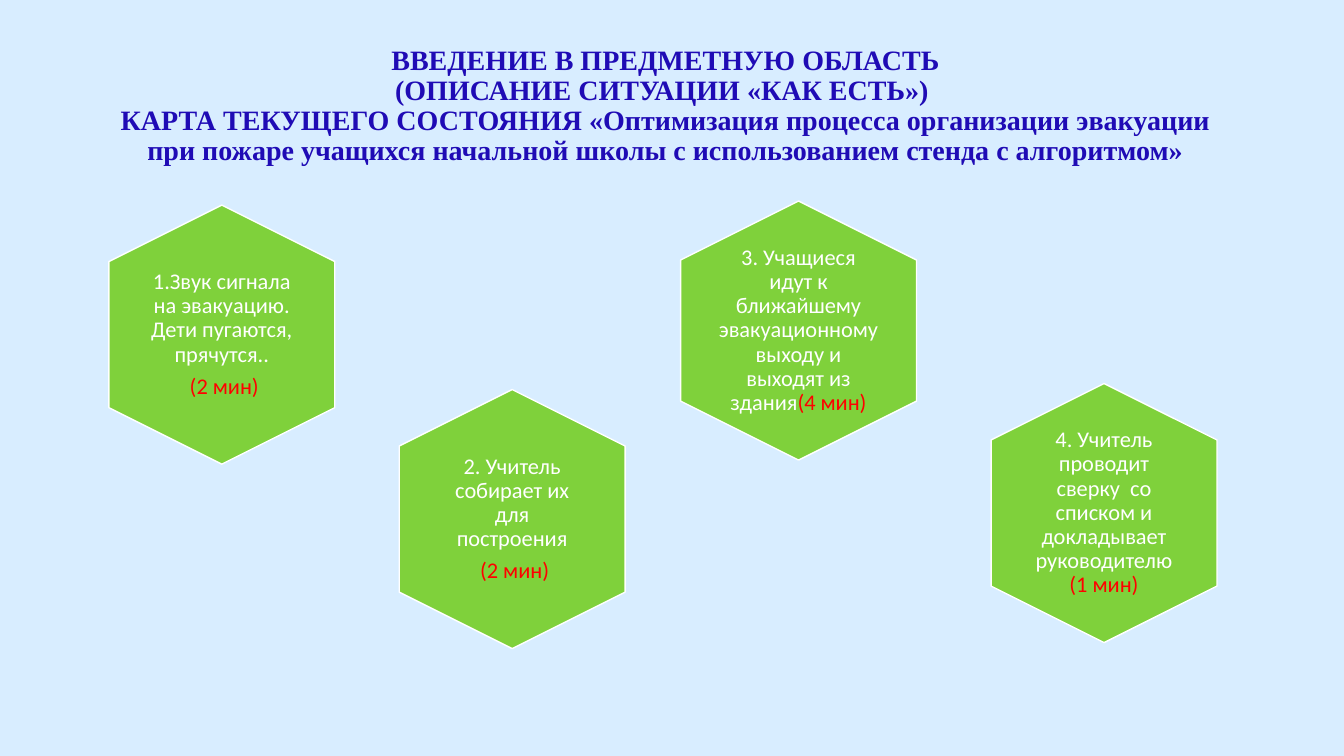
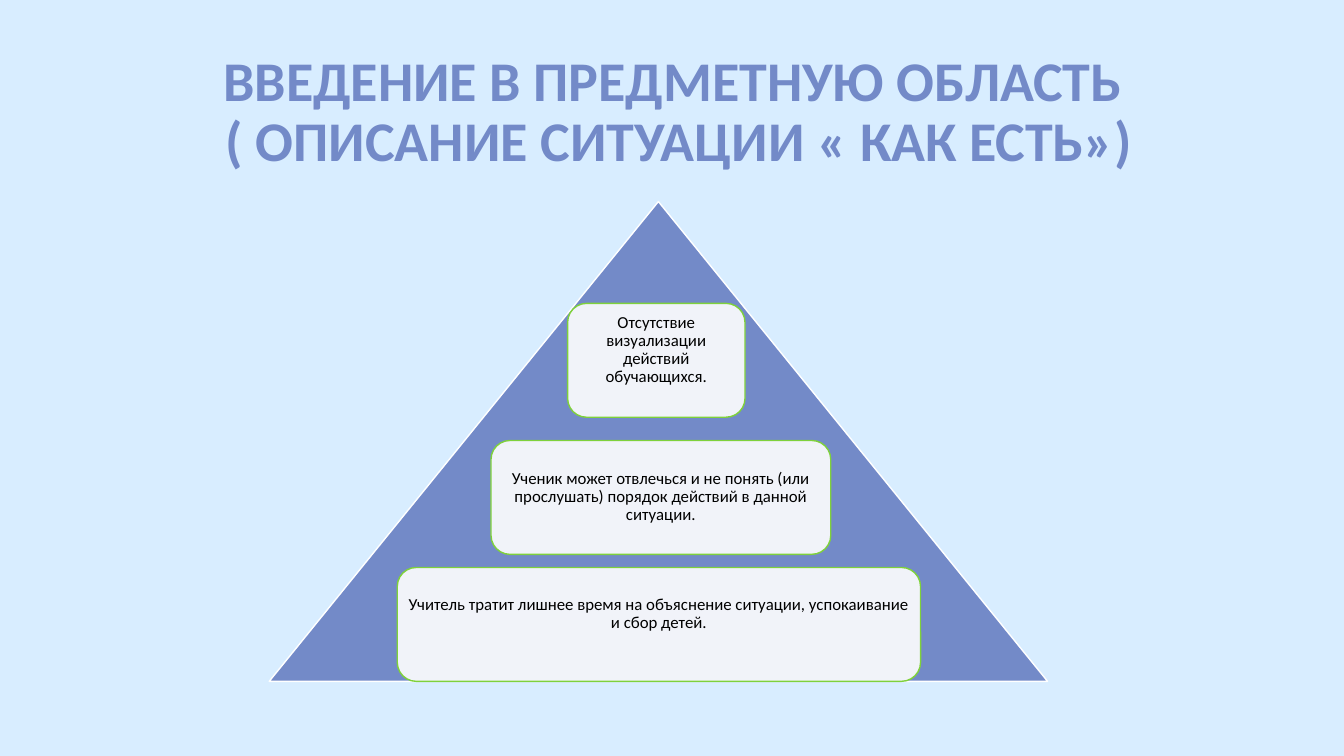
from lxml import etree
from pptx import Presentation
from pptx.dml.color import RGBColor
from pptx.enum.shapes import MSO_SHAPE
from pptx.enum.text import MSO_ANCHOR, MSO_AUTO_SIZE, PP_ALIGN
from pptx.oxml.ns import qn
from pptx.util import Inches, Pt

CENTER = PP_ALIGN.CENTER
MIDDLE = MSO_ANCHOR.MIDDLE
NO_FIT = MSO_AUTO_SIZE.NONE
HEXAGON = MSO_SHAPE.HEXAGON
TRIANGLE = MSO_SHAPE.ISOSCELES_TRIANGLE
ROUNDED = MSO_SHAPE.ROUNDED_RECTANGLE

COLORS = {
    "sky": "D8EDFF",
    "navy": "1F0BB5",
    "blue": "738AC8",
    "green": "7FD13B",
    "white": "FFFFFF",
    "black": "000000",
    "red": "FF0000",
}
RGB = {name: RGBColor.from_string(value) for name, value in COLORS.items()}


def add_figure(s, kind, x, y, w, h, fill, line):
    sp = s.shapes.add_shape(kind, Inches(x), Inches(y), Inches(w), Inches(h))
    sp.shadow.inherit = False
    sp.fill.solid()
    sp.fill.fore_color.rgb = RGB[fill]
    sp.line.color.rgb = RGB[line]
    sp.line.width = Pt(1)
    return sp


def write_text(sp, paragraphs, size, font="Calibri", bold=False, after=0.35, insets=None):
    tf = sp.text_frame
    frame_format = {"word_wrap": True, "auto_size": NO_FIT, "vertical_anchor": MIDDLE}
    for side, inset in (insets or {}).items():
        frame_format["margin_" + side] = Inches(inset)
    for name, value in frame_format.items():
        setattr(tf, name, value)
    for i, runs in enumerate(paragraphs):
        p = tf.add_paragraph() if i else tf.paragraphs[0]
        for name, value in {"alignment": CENTER, "line_spacing": 0.9,
                            "space_before": Pt(0), "space_after": Pt(size * after)}.items():
            setattr(p, name, value)
        for text, color in runs:
            for j, part in enumerate(text.split("\n")):
                if j:
                    p.add_line_break()
                r = p.add_run()
                r.text = part
                for name, value in {"name": font, "size": Pt(size), "bold": bold}.items():
                    setattr(r.font, name, value)
                r.font.color.rgb = RGB[color]


prs = Presentation()
prs.slide_width = Inches(13.33)
prs.slide_height = Inches(7.5)
background = prs.slide_master.background.fill
background.solid()
background.fore_color.rgb = RGB["sky"]

titles = [
    ("ВВЕДЕНИЕ В ПРЕДМЕТНУЮ ОБЛАСТЬ\n(ОПИСАНИЕ СИТУАЦИИ «КАК ЕСТЬ») \n"
     "КАРТА ТЕКУЩЕГО СОСТОЯНИЯ «Оптимизация процесса организации эвакуации "
     "при пожаре учащихся начальной школы с использованием стенда с алгоритмом»",
     0.85, 0.33, 20, "Times New Roman", "navy"),
    ("ВВЕДЕНИЕ В ПРЕДМЕТНУЮ ОБЛАСТЬ\n ( ОПИСАНИЕ СИТУАЦИИ « КАК ЕСТЬ»)",
     0.92, 0.4, 40, "Calibri", "blue"),
]
slides = []
for text, x, y, size, font, color in titles:
    s = prs.slides.add_slide(prs.slide_layouts[5])
    title = s.shapes.title
    for name, value in {"left": x, "top": y, "width": 11.5, "height": 1.45}.items():
        setattr(title, name, Inches(value))
    write_text(title, [[(text, color)]], size, font, bold=True, after=0)
    slides.append(s)
map_slide, pyramid_slide = slides

HEX_HEIGHT = 2.57
TEXT_HEIGHT = 1.77
steps = [
    (2.2, 3.32, 2.24, 1.54, 0.07,
     [[("1.Звук сигнала на эвакуацию. Дети пугаются, прячутся..", "white")],
      [(" (2 мин)", "red")]]),
    (5.08, 5.15, 2.24, 1.54, 0.07,
     [[("2. Учитель собирает их для построения", "white")], [(" (2 мин)", "red")]]),
    (7.92, 3.28, 2.34, 1.6, 0,
     [[("3. Учащиеся идут к ближайшему эвакуационному выходу и выходят из здания", "white"),
       ("(4 мин)", "red")]]),
    (10.95, 5.09, 2.24, 1.54, 0,
     [[("4. Учитель проводит сверку  со списком и докладывает руководителю ", "white"),
       ("(1 мин)", "red")]]),
]
for cx, cy, hex_width, text_width, inset, paragraphs in steps:
    sp = add_figure(map_slide, HEXAGON, cx - HEX_HEIGHT / 2, cy - hex_width / 2,
                    HEX_HEIGHT, hex_width, "green", "white")
    sp.rotation = 90
    box = map_slide.shapes.add_textbox(
        Inches(cx - text_width / 2), Inches(cy - TEXT_HEIGHT / 2),
        Inches(text_width), Inches(TEXT_HEIGHT))
    write_text(box, paragraphs, 16,
               insets=dict.fromkeys(("left", "top", "right", "bottom"), inset))

add_figure(pyramid_slide, TRIANGLE, 2.67, 2, 7.72, 4.76, "blue", "white")
problems = [
    (5.63, 3.01, 1.76, 0.25, "Отсутствие визуализации действий обучающихся."),
    (4.87, 4.37, 3.37, 0.05,
     "Ученик может отвлечься и не понять (или прослушать) порядок действий в данной ситуации."),
    (3.94, 5.63, 5.19, 0.25,
     "Учитель тратит лишнее время на объяснение ситуации, успокаивание и сбор детей."),
]
for x, y, w, bottom, text in problems:
    sp = add_figure(pyramid_slide, ROUNDED, x, y, w, 1.13, "white", "green")
    fill_color = sp.fill._xPr.find(qn("a:solidFill")).find(qn("a:srgbClr"))
    etree.SubElement(fill_color, qn("a:alpha")).set("val", "90000")
    write_text(sp, [[(text, "black")]], 12,
               insets={"left": 0.05, "top": 0.05, "right": 0.05, "bottom": bottom})

prs.save("out.pptx")
